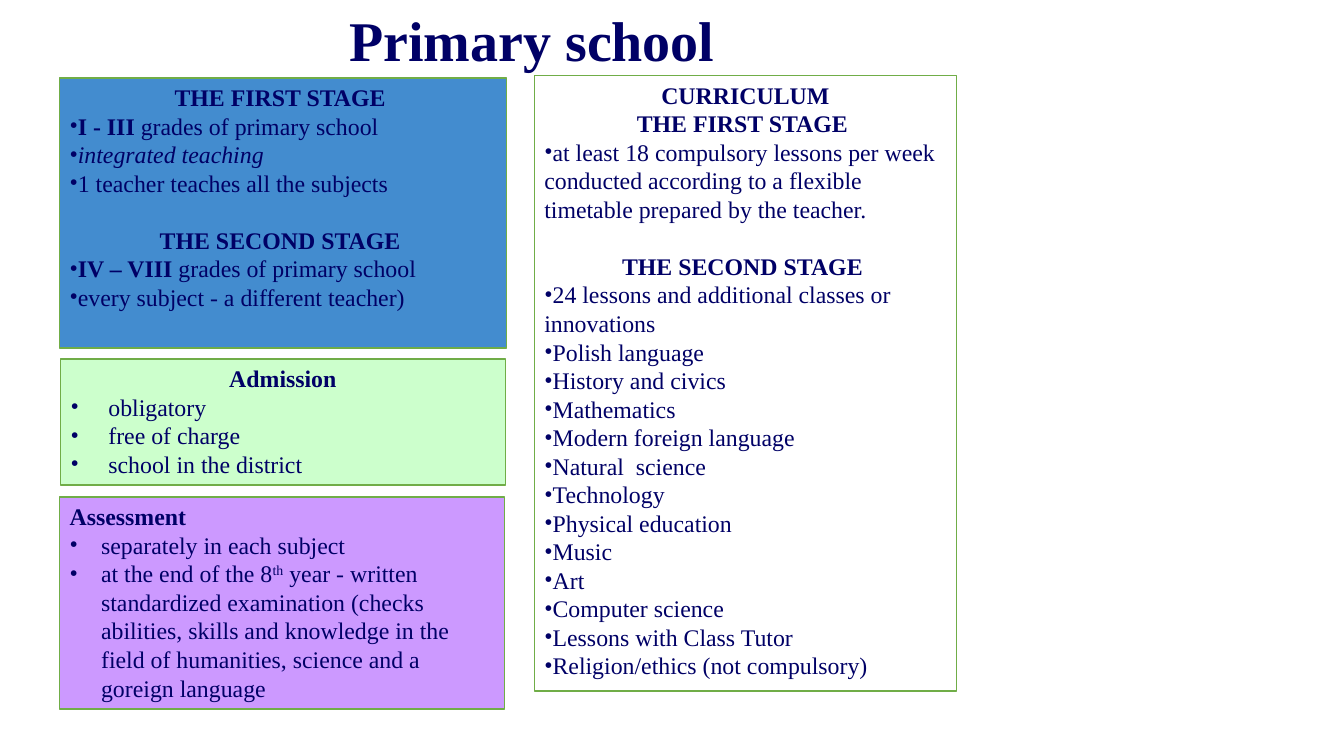
"""Build the Primary school slide with its stages, admission, assessment and curriculum panels."""
from lxml import etree
from pptx import Presentation
from pptx.dml.color import RGBColor
from pptx.enum.text import MSO_ANCHOR, MSO_AUTO_SIZE, PP_ALIGN
from pptx.oxml.ns import qn
from pptx.util import Pt

TOP = MSO_ANCHOR.TOP
NO_FIT = MSO_AUTO_SIZE.NONE
CENTER = PP_ALIGN.CENTER
LEFT = PP_ALIGN.LEFT

COLORS = {
    "text": "000066", "border": "70AD47", "stages": "438CCF",
    "curriculum": "FFFFFF", "admission": "CCFFCC", "assessment": "CC99FF",
}
PITCH = 20.4
COMPARISON = 4
BOLD = {"bold": True}
ITALIC = {"italic": True}

STAGES = [
    ("*", [("I - III ", BOLD), ("grades of primary school", {})]),
    ("*", [("integrated teaching", ITALIC)]),
    "1 teacher teaches all the subjects",
]
SECOND_STAGE = [
    ("*", [("IV – VIII ", BOLD), ("grades of primary school", {})]),
    "every subject - a different teacher)",
]
CURRICULUM = [
    "24 lessons and additional classes or innovations", "Polish language",
    "History and civics", "Mathematics", "Modern foreign language",
    "Natural  science", "Technology", "Physical education", "Music", "Art",
    "Computer science", "Lessons with Class Tutor",
    "Religion/ethics (not compulsory)",
]
ASSESSMENT = [
    "separately in each subject",
    ("*", [("at the end of the 8", {}), ("th", {"baseline": 30000}),
           (" year - written standardized examination (checks abilities, skills and "
            "knowledge in the field of humanities, science and a goreign language", {})]),
]


class Deck:
    """Hold the text style and the current slide."""

    def __init__(self, width, height):
        """Start a presentation with one slide."""
        self.prs = Presentation()
        self.prs.slide_width, self.prs.slide_height = Pt(width), Pt(height)
        self.slide = self.prs.slides.add_slide(self.prs.slide_layouts[COMPARISON])
        self.font = {"name": "Times New Roman", "size": Pt(17), "bold": False, "italic": False}

    def place(self, sp, left, top, width, height):
        """Move a placeholder and return its text frame."""
        box = {"left": left, "top": top, "width": width, "height": height}
        for key, value in box.items():
            setattr(sp, key, Pt(value))
        frame = {"word_wrap": True, "auto_size": NO_FIT, "vertical_anchor": TOP,
                 "margin_left": Pt(7.2), "margin_right": Pt(7.2),
                 "margin_top": Pt(3.6), "margin_bottom": Pt(3.6)}
        tf = sp.text_frame
        for key, value in frame.items():
            setattr(tf, key, value)
        return tf

    def run(self, p, text, **extra):
        """Add one formatted run."""
        r = p.add_run()
        r.text = text
        baseline = extra.pop("baseline", None)
        for key, value in {**self.font, **extra}.items():
            setattr(r.font, key, value)
        r.font.color.rgb = RGBColor.from_string(COLORS["text"])
        if baseline:
            r.font._element.set("baseline", str(baseline))

    def title(self, text, box):
        """Fill the title placeholder."""
        tf = self.place(self.slide.shapes.title, *box)
        tf.margin_left = Pt(47.2)
        p = tf.paragraphs[0]
        p.alignment = CENTER
        self.run(p, text, size=Pt(40), bold=True)

    def paragraph(self, p, runs, bullet, indent, align, before):
        """Format a heading or a list paragraph and fill it."""
        pPr = p._p.get_or_add_pPr()
        pPr.set("marL", str(Pt(indent)))
        pPr.set("indent", str(-Pt(indent)))
        if bullet:
            etree.SubElement(pPr, qn("a:buFont")).set("typeface", "Times New Roman")
            etree.SubElement(pPr, qn("a:buChar")).set("char", "•")
        else:
            etree.SubElement(pPr, qn("a:buNone"))
        layout = {"alignment": align, "line_spacing": Pt(PITCH),
                  "space_before": Pt(before), "space_after": Pt(0)}
        for key, value in layout.items():
            setattr(p, key, value)
        for text, extra in runs:
            self.run(p, text, **extra)

    def panel(self, idx, fill, box, sections, indent=0, align=CENTER):
        """Fill a body placeholder with sections of a heading and its list."""
        sp = self.slide.placeholders[idx]
        tf = self.place(sp, *box)
        sp.fill.solid()
        sp.fill.fore_color.rgb = RGBColor.from_string(COLORS[fill])
        sp.line.color.rgb = RGBColor.from_string(COLORS["border"])
        sp.line.width = Pt(1)
        p = tf.paragraphs[0]
        for number, (headings, items) in enumerate(sections):
            for place, heading in enumerate(headings):
                if number or place:
                    p = tf.add_paragraph()
                before = PITCH if number and not place else 0
                self.paragraph(p, [(heading, BOLD)], False, 0, align, before)
            for item in items:
                runs = [(item, {})] if isinstance(item, str) else item[1]
                self.paragraph(tf.add_paragraph(), runs, True, indent, LEFT, 0)


def main():
    """Draw the slide and save it."""
    deck = Deck(960, 540)
    deck.title("Primary school", (0, 0, 720, 55.4))
    deck.panel(1, "stages", (42.5, 55.6, 319.5, 193), [
        (["THE FIRST STAGE "], STAGES),
        (["THE SECOND STAGE "], SECOND_STAGE),
    ])
    deck.panel(2, "curriculum", (381.6, 53.9, 301.7, 439.8), [
        (["CURRICULUM", "THE FIRST STAGE "],
         ["at least 18 compulsory lessons per week conducted according to a flexible "
          "timetable prepared by the teacher."]),
        (["THE SECOND STAGE "], CURRICULUM),
    ])
    deck.panel(3, "admission", (43.2, 256.4, 317.8, 90), [
        (["Admission"], ["obligatory", "free of charge", "school in the district"]),
    ], indent=27)
    deck.panel(4, "assessment", (42.5, 355, 317.8, 151.4), [
        (["Assessment"], ASSESSMENT),
    ], indent=22.5, align=LEFT)
    deck.prs.save("out.pptx")


if __name__ == "__main__":
    main()
